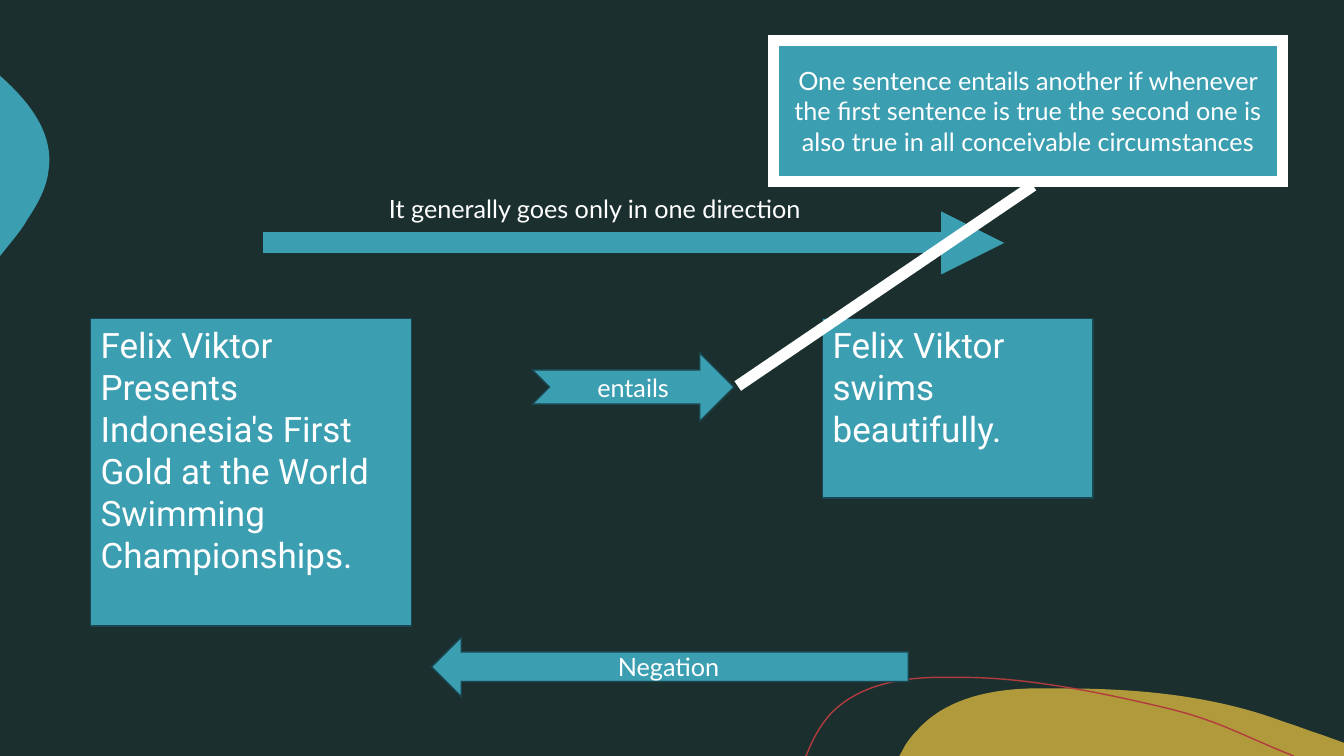
from lxml import etree
from pptx import Presentation
from pptx.dml.color import RGBColor
from pptx.enum.shapes import MSO_CONNECTOR, MSO_SHAPE
from pptx.enum.text import MSO_ANCHOR, PP_ALIGN
from pptx.oxml.ns import qn
from pptx.util import Inches, Pt

RECTANGLE = MSO_SHAPE.RECTANGLE
NOTCHED_ARROW = MSO_SHAPE.NOTCHED_RIGHT_ARROW
LEFT_ARROW = MSO_SHAPE.LEFT_ARROW
CALLOUT = MSO_SHAPE.LINE_CALLOUT_1
STRAIGHT = MSO_CONNECTOR.STRAIGHT
TOP, MIDDLE = MSO_ANCHOR.TOP, MSO_ANCHOR.MIDDLE
LEFT, CENTER = PP_ALIGN.LEFT, PP_ALIGN.CENTER

COLORS = {
    "background": "1B2F2E",
    "teal": "3B9EB1",
    "edge": "1A454E",
    "gold": "B19A3B",
    "red": "B13B3E",
    "white": "FFFFFF",
}
SENTENCE = {"name": "Roboto", "size": Pt(25)}
LABEL = {"name": "Lato", "size": Pt(18)}

# Outlines: two numbers make a straight step, six make a Bézier curve
GOLD_HILL = [
    (10.54, 6.83),
    (11.28, 6.83, 12.04, 6.9, 12.73, 7.16),
    (12.86, 7.2, 12.98, 7.25, 13.11, 7.29),
    (13.33, 7.37), (13.33, 7.5), (8.92, 7.5), (8.98, 7.39),
    (9.02, 7.33, 9.06, 7.28, 9.11, 7.23),
    (9.39, 6.93, 9.82, 6.84, 10.23, 6.83),
    (10.33, 6.83, 10.43, 6.83, 10.54, 6.83),
]
TEAL_BULGE = [
    (0, 0.75), (0.01, 0.76),
    (0.3, 1.02, 0.54, 1.33, 0.48, 1.7),
    (0.46, 1.87, 0.37, 2.03, 0.27, 2.18),
    (0.24, 2.24, 0.17, 2.33, 0.08, 2.44),
    (0, 2.54),
]
RED_CURVE = [
    (7.99, 7.5), (8, 7.49),
    (8.06, 7.33, 8.14, 7.19, 8.24, 7.08),
    (8.5, 6.81, 8.89, 6.73, 9.26, 6.72),
    (9.55, 6.72),
    (10.22, 6.72, 11, 6.89, 11.55, 7.02),
    (12.09, 7.15, 12.26, 7.27, 12.83, 7.5),
]


def rgb(color):
    return RGBColor.from_string(COLORS[color])


def paint(shape, fill=None, line=None, width=1):
    shape.shadow.inherit = False
    if fill:
        shape.fill.solid()
        shape.fill.fore_color.rgb = rgb(fill)
    else:
        shape.fill.background()
    if line:
        shape.line.color.rgb = rgb(line)
        shape.line.width = Pt(width)
        etree.SubElement(shape.line._get_or_add_ln(), qn("a:miter"), lim="800000")
    else:
        shape.line.fill.background()


def write(shape, text, font, anchor=TOP, align=LEFT, wrap=True):
    frame = shape.text_frame
    frame.word_wrap = wrap
    frame.vertical_anchor = anchor
    para = frame.paragraphs[0]
    para.alignment = align
    span = para.add_run()
    span.text = text
    for name, value in font.items():
        setattr(span.font, name, value)
    span.font.color.rgb = rgb("white")


def add_outline(page, outline, close=True, **look):
    """Draw the steps as straight lines, then bend those that are curves."""
    ends = [tuple(map(Inches, step[-2:])) for step in outline]
    builder = page.shapes.build_freeform(*ends[0])
    builder.add_line_segments(ends[1:], close=close)
    shape = builder.convert_to_shape()
    segments = list(shape._element.iter(qn("a:lnTo")))
    for segment, step in zip(segments, outline[1:]):
        if len(step) == 6:
            segment.tag = qn("a:cubicBezTo")
            for index in (0, 1):
                x, y = map(Inches, step[2 * index:2 * index + 2])
                handle = etree.Element(
                    qn("a:pt"), x=str(x - shape.left), y=str(y - shape.top))
                segment.insert(index, handle)
    paint(shape, **look)


def add_box(page, kind, place, line="edge", width=1):
    box = page.shapes.add_shape(kind, *map(Inches, place))
    paint(box, "teal", line, width)
    return box


def add_label(page, place, text):
    write(page.shapes.add_textbox(*map(Inches, place)), text, LABEL, wrap=False)


def add_arrow(page, start, end, width):
    arrow = page.shapes.add_connector(STRAIGHT, *map(Inches, start + end))
    arrow.line.color.rgb = rgb("teal")
    arrow.line.width = Pt(width)
    etree.SubElement(arrow.line._get_or_add_ln(), qn("a:tailEnd"), type="triangle")
    etree.SubElement(arrow._element.spPr, qn("a:effectLst"))


def main():
    deck = Presentation()
    deck.slide_width, deck.slide_height = Inches(13.33), Inches(7.5)
    page = deck.slides.add_slide(deck.slide_layouts[6])
    page.background.fill.solid()
    page.background.fill.fore_color.rgb = rgb("background")

    # Decoration
    add_outline(page, GOLD_HILL, fill="gold")
    add_outline(page, TEAL_BULGE, fill="teal")
    add_outline(page, RED_CURVE, close=False, line="red")

    # The two sentences
    premise = add_box(page, RECTANGLE, (0.9, 3.16, 3.18, 3.05))
    write(premise, "Felix Viktor Presents Indonesia's First Gold at the World "
                   "Swimming Championships.", SENTENCE)
    conclusion = add_box(page, RECTANGLE, (8.16, 3.16, 2.68, 1.78))
    write(conclusion, "Felix Viktor swims beautifully.", SENTENCE)

    # Direction of entailment
    add_arrow(page, (2.61, 2.41), (9.96, 2.41), 15)
    add_label(page, (3.76, 1.87, 4.53, 0.4), "It generally goes only in one direction")
    entails = add_box(page, NOTCHED_ARROW, (5.28, 3.5, 2, 0.68))
    write(entails, "entails", LABEL, MIDDLE, CENTER)

    # Definition callout, pointing at the entailment arrow
    definition = add_box(page, CALLOUT, (7.67, 0.4, 5.05, 1.4), "white", 8.25)
    for index, value in enumerate((1.03, 0.51, 2.45, -0.07)):
        definition.adjustments[index] = value
    write(definition, "One sentence entails another if whenever the first sentence is "
                      "true the second one is also true in all conceivable circumstances",
          LABEL, MIDDLE, CENTER)

    # Negation
    add_box(page, LEFT_ARROW, (4.28, 6.32, 4.73, 0.59))
    add_label(page, (6.03, 6.41, 1.34, 0.4), "Negation")

    deck.save("out.pptx")


if __name__ == "__main__":
    main()
